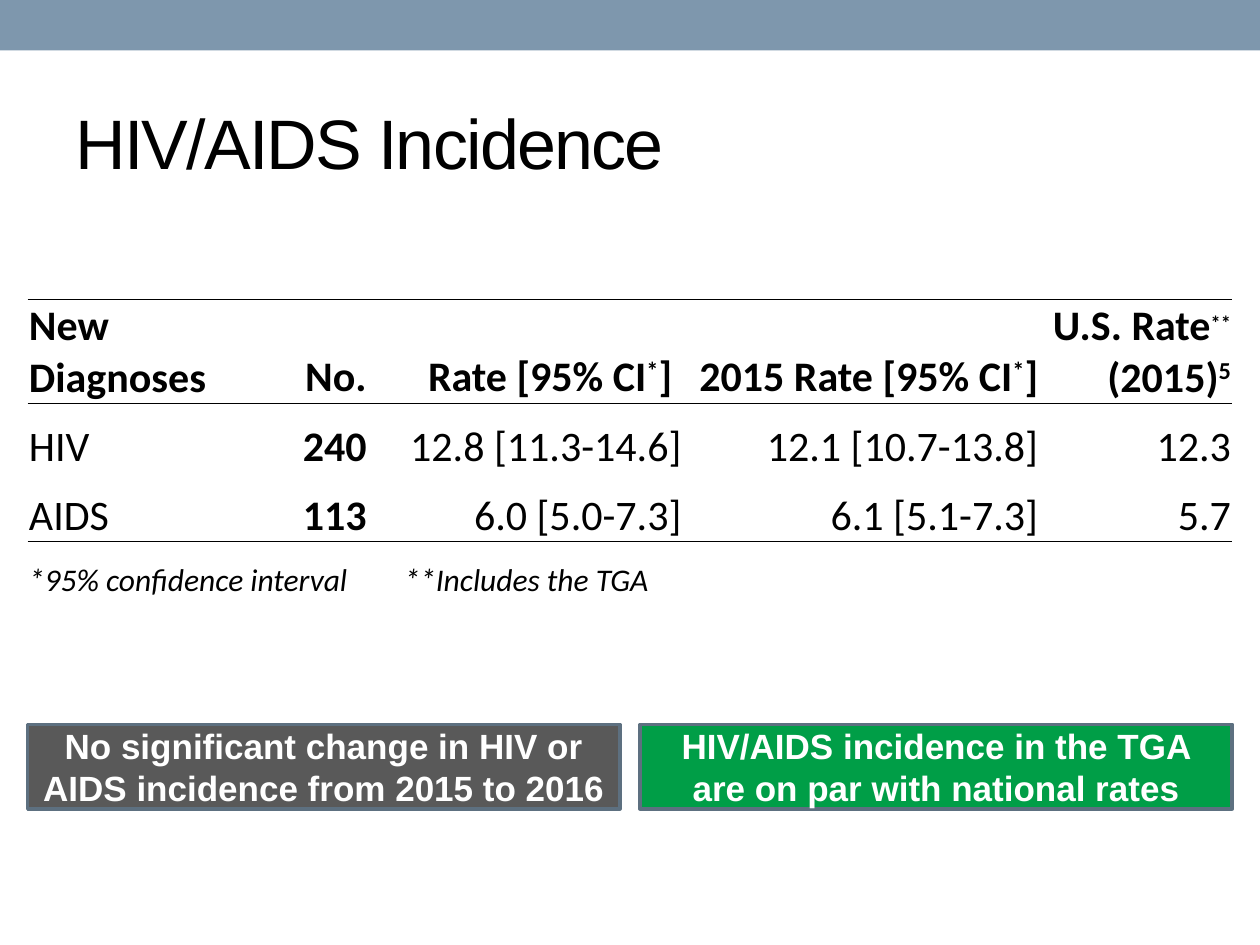
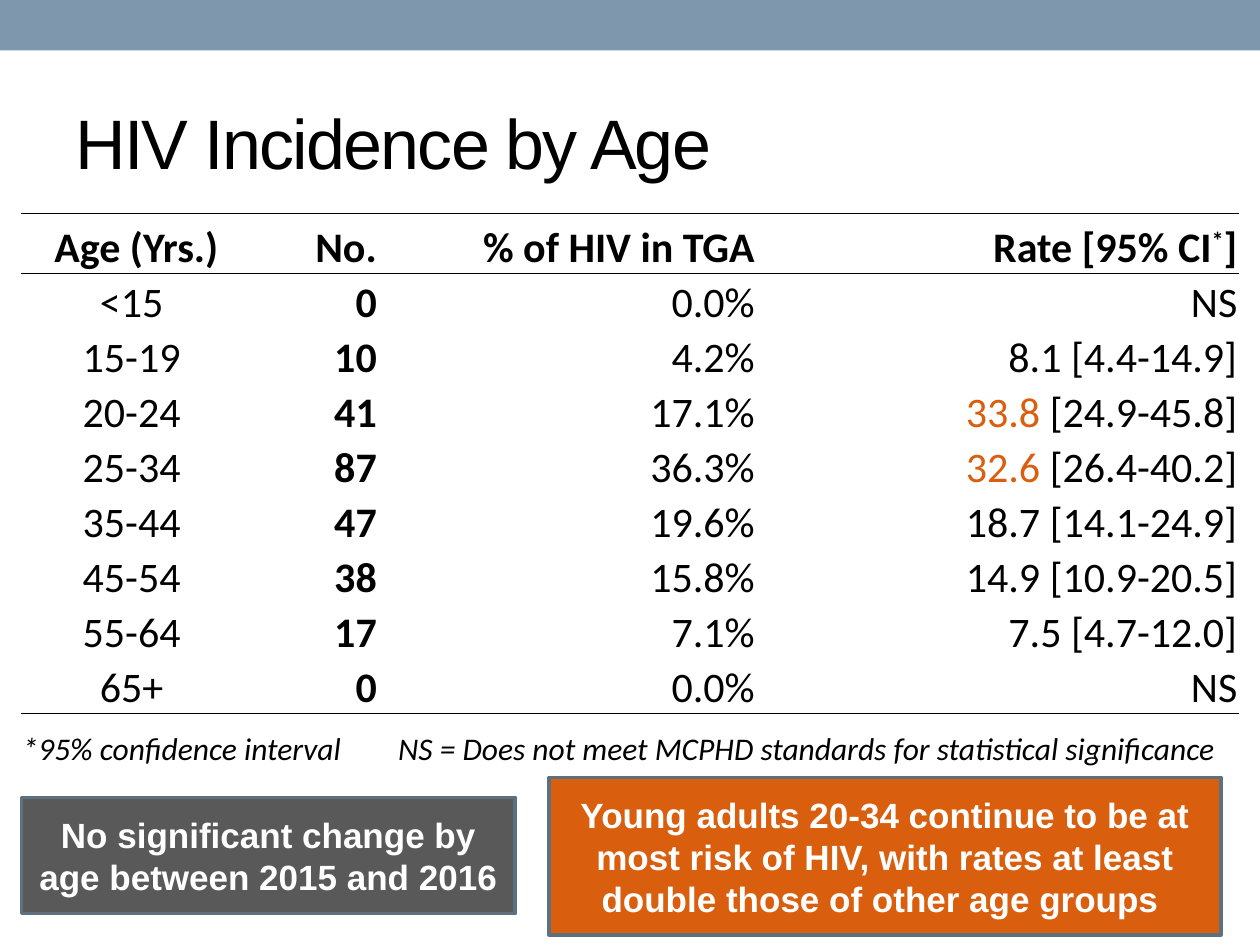
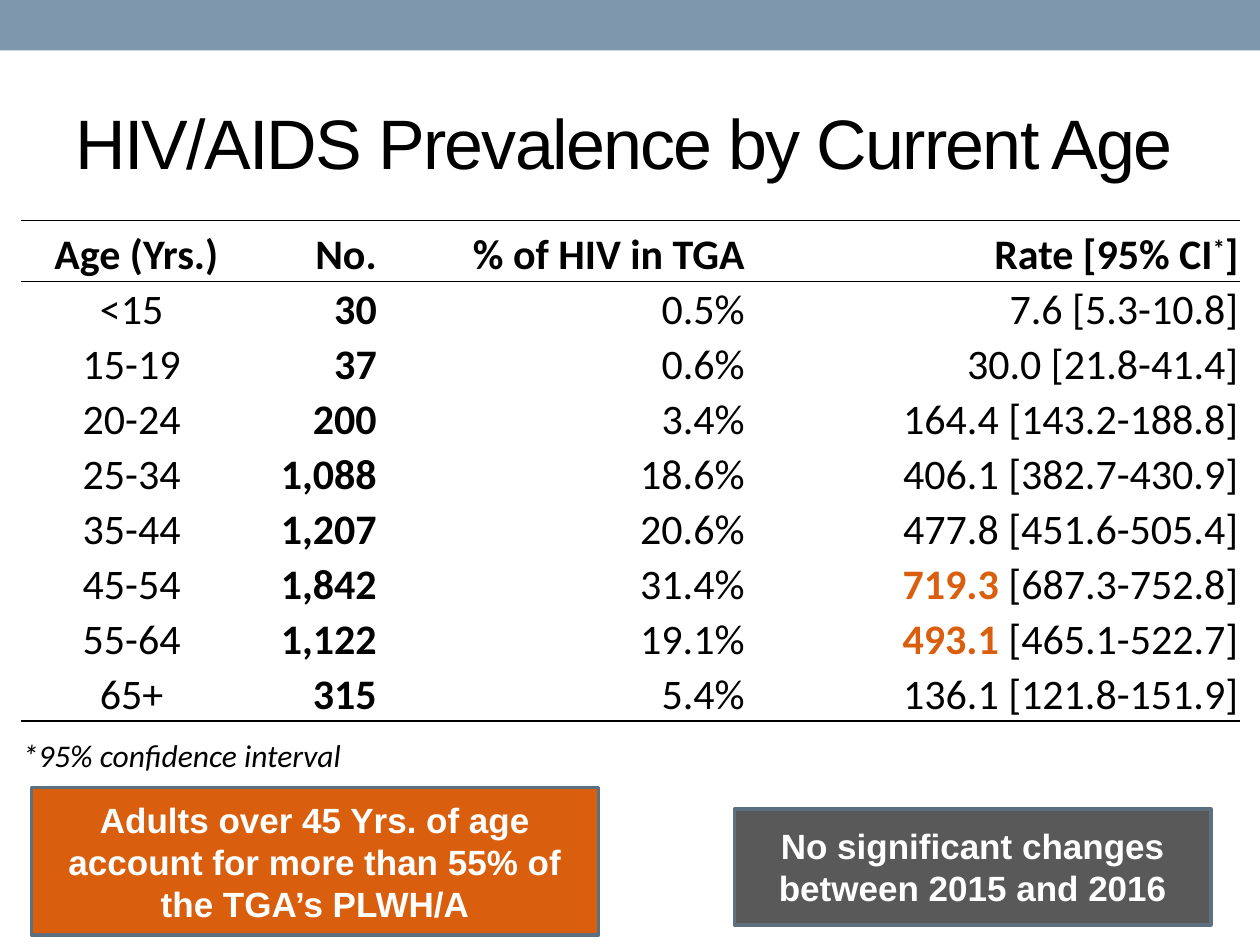
from dataclasses import dataclass

from lxml.etree import SubElement
from pptx import Presentation
from pptx.dml.color import RGBColor
from pptx.enum.shapes import MSO_SHAPE
from pptx.enum.text import MSO_ANCHOR, PP_ALIGN
from pptx.oxml.ns import qn
from pptx.util import Inches, Pt


@dataclass(frozen=True)
class Theme:
    band: str = "7E97AD"
    ink: str = "000000"
    white: str = "FFFFFF"
    neutral: str = "595959"
    good: str = "009E47"
    alert: str = "D95F0E"
    outline: str = "5D7080"
    display_font: str = "Arial"
    table_font: str = "Calibri"
    title_size: int = 40
    table_size: int = 24
    mark_size: int = 20
    footnote_size: int = 18
    callout_size: int = 20
    thin_rule: float = 0.5
    thick_rule: float = 1
    outline_width: float = 2.08


THEME = Theme()
PLAIN_TABLE_STYLE = "{2D5ABB26-0587-4C30-8999-92F81FD0307C}"
FOOTNOTE_TAB = 2.98
LEFT, CENTER, RIGHT = PP_ALIGN.LEFT, PP_ALIGN.CENTER, PP_ALIGN.RIGHT


def rgb(code):
    return RGBColor.from_string(code)


def raised(text, **style):
    return text, {"baseline": 30, **style}


def highlighted(text, **style):
    return text, {"color": THEME.alert, **style}


RATE_HEADING = ["Rate [95% CI", raised("*"), "]"]
AGE_HEADINGS = [" Age (Yrs.)", "No.", "% of HIV in TGA", RATE_HEADING]


def write_text(frame, text, align=LEFT, anchor=MSO_ANCHOR.MIDDLE, **style):
    """Fill a frame with a string, or a list of strings and (string, style) pairs."""
    frame.word_wrap = True
    frame.vertical_anchor = anchor
    paragraph = frame.paragraphs[0]
    paragraph.alignment = align
    for part in [text] if isinstance(text, str) else text:
        words, changes = (part, {}) if isinstance(part, str) else part
        add_run(paragraph, words, **{**style, **changes})


def add_run(paragraph, words, font, size, color=THEME.ink, bold=False,
            italic=False, spacing=0, baseline=0):
    run = paragraph.add_run()
    run.text = words
    run.font.name = font
    run.font.size = Pt(size)
    run.font.color.rgb = rgb(color)
    run.font.bold = bold
    run.font.italic = italic
    properties = run._r.get_or_add_rPr()
    if spacing:
        properties.set("spc", str(spacing * 100))
    if baseline:
        properties.set("baseline", str(baseline * 1000))


def add_box(slide, left, top, width, height, fill):
    box = slide.shapes.add_shape(MSO_SHAPE.RECTANGLE, Inches(left), Inches(top),
                                 Inches(width), Inches(height))
    box.shadow.inherit = False
    box.fill.solid()
    box.fill.fore_color.rgb = rgb(fill)
    box.line.fill.background()
    return box


def add_titled_slide(deck, title):
    slide = deck.slides.add_slide(deck.slide_layouts[6])
    add_box(slide, 0, 0, 10, 0.4, THEME.band)
    heading = slide.shapes.add_textbox(Inches(0.5), Inches(0.58), Inches(9), Inches(1.08))
    write_text(heading.text_frame, title, font=THEME.display_font,
               size=THEME.title_size, spacing=-1)
    return slide


def add_callout(slide, message, left, top, width, height, fill):
    callout = add_box(slide, left, top, width, height, fill)
    callout.line.color.rgb = rgb(THEME.outline)
    callout.line.width = Pt(THEME.outline_width)
    write_text(callout.text_frame, message, align=CENTER, font=THEME.display_font,
               size=THEME.callout_size, color=THEME.white, bold=True)


def rule_row(table, row, edge, width):
    """Draw a line along the top (lnT) or bottom (lnB) edge of a table row."""
    for cell in table.rows[row].cells:
        line = SubElement(cell._tc.get_or_add_tcPr(), qn(f"a:{edge}"), w=str(Pt(width)))
        SubElement(SubElement(line, qn("a:solidFill")), qn("a:srgbClr"), val=THEME.ink)


def write_cell(cell, text, **style):
    cell.margin_left = cell.margin_right = cell.margin_top = Inches(0.01)
    cell.margin_bottom = 0
    cell.vertical_anchor = MSO_ANCHOR.BOTTOM
    write_text(cell.text_frame, text, anchor=None, font=THEME.table_font, **style)


def add_footnote(table, footnote):
    last = len(table.rows) - 1
    cell = table.cell(last, 0)
    cell.merge(table.cell(last, len(table.columns) - 1))
    write_cell(cell, footnote, size=THEME.footnote_size, italic=True)
    tabs = SubElement(cell.text_frame.paragraphs[0]._p.get_or_add_pPr(), qn("a:tabLst"))
    SubElement(tabs, qn("a:tab"), pos=str(Inches(FOOTNOTE_TAB)), algn="l")


def add_rate_table(slide, left, top, columns, heights, records, footnote,
                   label_align, closing_rule):
    """Add a ruled table: headings, one record per row, and a merged footnote row."""
    frame = slide.shapes.add_table(len(heights), len(columns), Inches(left), Inches(top),
                                   Inches(sum(columns)), Inches(sum(heights)))
    table = frame.table
    table.first_row = table.horz_banding = False
    table._tbl.tblPr.find(qn("a:tableStyleId")).text = PLAIN_TABLE_STYLE
    for column, width in zip(table.columns, columns):
        column.width = Inches(width)
    for row, height in zip(table.rows, heights):
        row.height = Inches(height)
    for r, record in enumerate(records):
        for c, value in enumerate(record):
            write_cell(table.cell(r, c), value, align=RIGHT if c else label_align,
                       size=THEME.table_size, bold=r == 0 or c == 1)
    add_footnote(table, footnote)
    rule_row(table, 0, "lnT", THEME.thin_rule)
    rule_row(table, 0, "lnB", THEME.thin_rule)
    rule_row(table, len(records) - 1, "lnB", closing_rule)
    for cell in table.iter_cells():
        cell.fill.background()


def add_age_table(slide, top, columns, records, footnote):
    heading_height, total_height = 0.48, 4.41
    row_count = len(records) + 1
    row_height = (total_height - heading_height) / row_count
    add_rate_table(slide, 0.17, top, columns, [heading_height] + [row_height] * row_count,
                   [AGE_HEADINGS, *records], footnote, CENTER, THEME.thick_rule)


def build_incidence(deck):
    slide = add_titled_slide(deck, "HIV/AIDS Incidence")
    us_heading = ["U.S. Rate", raised("**", size=THEME.mark_size), " (2015)", raised("5")]
    records = [
        ["New Diagnoses", "No.", ["Rate [95% CI", raised("*"), "] "],
         ["2015 ", *RATE_HEADING], us_heading],
        ["HIV", "240", "12.8 [11.3-14.6]", "12.1 [10.7-13.8]", "12.3"],
        ["AIDS", "113", "6.0 [5.0-7.3]", "6.1 [5.1-7.3]", "5.7"],
    ]
    add_rate_table(slide, 0.22, 2.38, [1.81, 0.89, 2.5, 2.83, 1.53],
                   [0.82, 0.55, 0.55, 0.46], records,
                   "*95% confidence interval\t**Includes the TGA", LEFT, THEME.thin_rule)
    add_callout(slide, "No significant change in HIV or AIDS incidence from 2015 to 2016",
                0.22, 5.75, 4.7, 0.67, THEME.neutral)
    add_callout(slide, "HIV/AIDS incidence in the TGA are on par with national rates",
                5.08, 5.75, 4.7, 0.67, THEME.good)


def build_incidence_by_age(deck):
    slide = add_titled_slide(deck, "HIV Incidence by Age")
    records = [
        ["<15", "0", "0.0%", "NS"],
        ["15-19", "10", "4.2%", "8.1 [4.4-14.9]"],
        ["20-24", "41", "17.1%", [highlighted("33.8 "), "[24.9-45.8]"]],
        ["25-34", "87", "36.3%", [highlighted("32.6 "), "[26.4-40.2]"]],
        ["35-44", "47", "19.6%", "18.7 [14.1-24.9]"],
        ["45-54", "38", "15.8%", "14.9 [10.9-20.5]"],
        ["55-64", "17", "7.1%", "7.5 [4.7-12.0]"],
        ["65+", "0", "0.0%", "NS"],
    ]
    add_age_table(slide, 1.69, [1.75, 1.08, 3, 3.83], records,
                  "*95% confidence interval\tNS = Does not meet MCPHD standards "
                  "for statistical significance")
    add_callout(slide, "No significant change by age between 2015 and 2016",
                0.17, 6.33, 3.92, 0.92, THEME.neutral)
    add_callout(slide, "Young adults 20-34 continue to be at most risk of HIV, with rates "
                "at least double those of other age groups ",
                4.36, 6.17, 5.33, 1.25, THEME.alert)


def build_prevalence_by_age(deck):
    slide = add_titled_slide(deck, "HIV/AIDS Prevalence by Current Age")
    add_callout(slide, "No significant changes between 2015 and 2016",
                5.83, 6.42, 3.78, 0.92, THEME.neutral)
    add_callout(slide, "Adults over 45 Yrs. of age account for more than 55% of "
                "the TGA’s PLWH/A", 0.25, 6.25, 4.5, 1.17, THEME.alert)
    records = [
        ["<15", "30", "0.5%", "7.6 [5.3-10.8]"],
        ["15-19", "37", "0.6%", "30.0 [21.8-41.4]"],
        ["20-24", "200", "3.4%", "164.4 [143.2-188.8]"],
        ["25-34", "1,088", "18.6%", "406.1 [382.7-430.9]"],
        ["35-44", "1,207", "20.6%", "477.8 [451.6-505.4]"],
        ["45-54", "1,842", "31.4%", [highlighted("719.3", bold=True), " [687.3-752.8]"]],
        ["55-64", "1,122", "19.1%", [highlighted("493.1", bold=True), " [465.1-522.7]"]],
        ["65+", "315", "5.4%", "136.1 [121.8-151.9]"],
    ]
    add_age_table(slide, 1.75, [1.75, 1.08, 2.92, 3.92], records,
                  "*95% confidence interval")


def main():
    deck = Presentation()
    deck.slide_width, deck.slide_height = Inches(10), Inches(7.5)
    build_incidence(deck)
    build_incidence_by_age(deck)
    build_prevalence_by_age(deck)
    deck.save("out.pptx")


if __name__ == "__main__":
    main()
